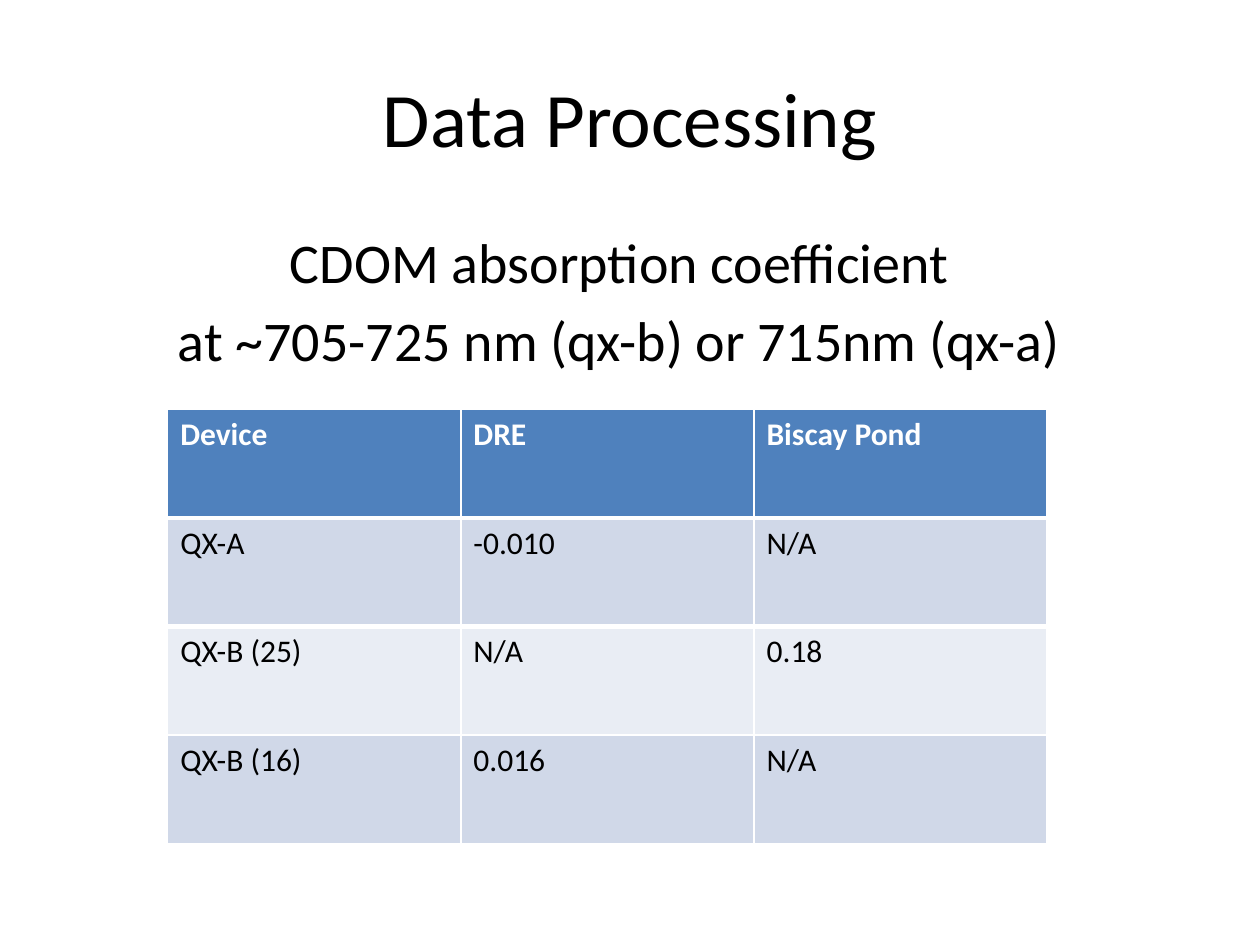
from pptx import Presentation
from pptx.dml.color import RGBColor
from pptx.enum.text import MSO_ANCHOR, PP_ALIGN
from pptx.oxml.ns import qn
from pptx.util import Cm, Pt
from lxml import etree

CENTER = PP_ALIGN.CENTER
LEFT = PP_ALIGN.LEFT
MIDDLE = MSO_ANCHOR.MIDDLE
TOP = MSO_ANCHOR.TOP

FONT = "Calibri"
BLACK = RGBColor(0x00, 0x00, 0x00)
WHITE = RGBColor(0xFF, 0xFF, 0xFF)
HEADER_BLUE = RGBColor(0x4F, 0x81, 0xBD)
BAND_COLOURS = (RGBColor(0xD0, 0xD8, 0xE8), RGBColor(0xE9, 0xED, 0xF4))

TITLE_AND_CONTENT = 1
COLUMN_WIDTH = Cm(5.91)
ROW_HEIGHT = Cm(2.19)

SUBTITLE_LINES = (
    "CDOM absorption coefficient",
    "at ~705-725 nm (qx-b) or 715nm (qx-a)",
)
ABSORPTION_ROWS = (
    ("Device", "DRE", "Biscay Pond"),
    ("QX-A", "-0.010", "N/A"),
    ("QX-B (25)", "N/A", "0.18"),
    ("QX-B (16)", "0.016", "N/A"),
)


def add_run(paragraph, text, size, colour=BLACK, bold=False, alignment=CENTER):
    paragraph.alignment = alignment
    run = paragraph.add_run()
    run.text = text
    run.font.name = FONT
    run.font.size = Pt(size)
    run.font.bold = bold
    run.font.color.rgb = colour


def place(shape, left, top, width, height):
    shape.left, shape.top = Cm(left), Cm(top)
    shape.width, shape.height = Cm(width), Cm(height)


def remove_bullet(paragraph):
    properties = paragraph._p.get_or_add_pPr()
    properties.set("marL", "0")
    properties.set("indent", "0")
    etree.SubElement(properties, qn("a:buNone"))


def set_border(cell, side, width):
    line = etree.Element(qn(f"a:{side}"), w=str(Pt(width)))
    fill = etree.SubElement(line, qn("a:solidFill"))
    etree.SubElement(fill, qn("a:srgbClr"), val=str(WHITE))
    # Borders come before the fill in the cell properties
    cell._tc.get_or_add_tcPr().insert(0, line)


def fill_title(shape, text):
    place(shape, 1.27, 0.76, 22.86, 3.18)
    shape.text_frame.vertical_anchor = MIDDLE
    add_run(shape.text_frame.paragraphs[0], text, 44)


def fill_body(shape, lines):
    place(shape, 1.27, 4.45, 22.86, 3.18)
    frame = shape.text_frame
    frame.vertical_anchor = TOP
    # A wider right inset sets the lines slightly left of centre
    frame.margin_right = Cm(0.69)
    for index, line in enumerate(lines):
        paragraph = frame.add_paragraph() if index else frame.paragraphs[0]
        paragraph.space_before = Pt(6.4)
        remove_bullet(paragraph)
        add_run(paragraph, line, 32)


def add_absorption_table(slide, rows):
    row_count, column_count = len(rows), len(rows[0])
    # The default table style supplies the thin white cell borders
    table = slide.shapes.add_table(
        row_count, column_count, Cm(3.38), Cm(8.25),
        COLUMN_WIDTH * column_count, ROW_HEIGHT * row_count,
    ).table
    for column in table.columns:
        column.width = COLUMN_WIDTH
    for row_index, values in enumerate(rows):
        table.rows[row_index].height = ROW_HEIGHT
        is_header = row_index == 0
        fill = HEADER_BLUE if is_header else BAND_COLOURS[(row_index - 1) % 2]
        for column_index, value in enumerate(values):
            cell = table.cell(row_index, column_index)
            cell.fill.solid()
            cell.fill.fore_color.rgb = fill
            # A thick rule parts the header from the first data row
            if is_header:
                set_border(cell, "lnB", 3)
            elif row_index == 1:
                set_border(cell, "lnT", 3)
            add_run(cell.text_frame.paragraphs[0], value, 18,
                    WHITE if is_header else BLACK, is_header, LEFT)


def main():
    presentation = Presentation()
    presentation.slide_width = Cm(25.4)
    presentation.slide_height = Cm(19.05)
    layout = presentation.slide_layouts[TITLE_AND_CONTENT]
    slide = presentation.slides.add_slide(layout)

    # Heading and subject
    fill_title(slide.shapes.title, "Data Processing")
    fill_body(slide.placeholders[1], SUBTITLE_LINES)

    # Coefficients by device and site
    add_absorption_table(slide, ABSORPTION_ROWS)

    presentation.save("out.pptx")


if __name__ == "__main__":
    main()
